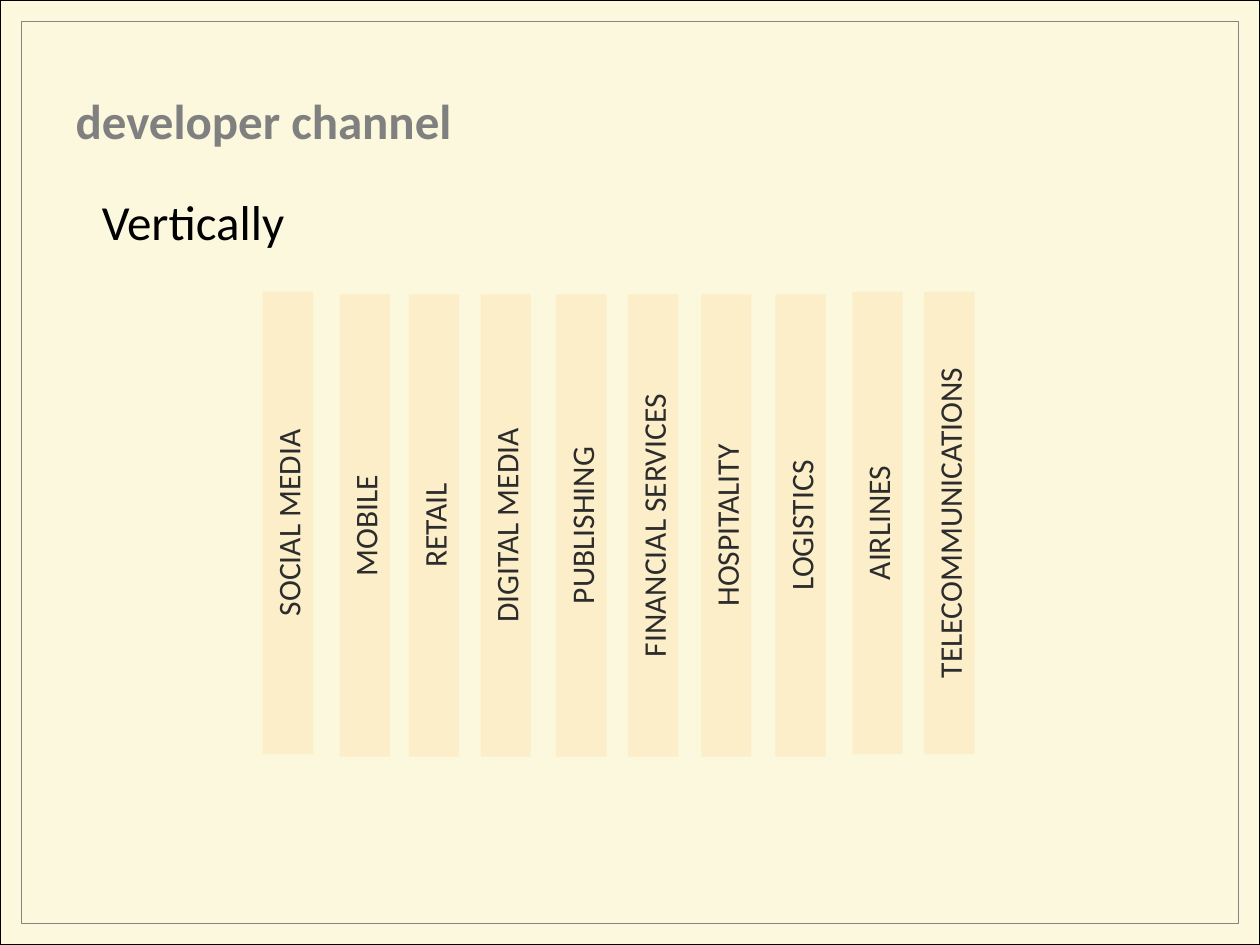
from pptx import Presentation
from pptx.dml.color import RGBColor
from pptx.enum.shapes import MSO_SHAPE as Shape
from pptx.enum.text import MSO_ANCHOR as Anchor, MSO_AUTO_SIZE as Fit, PP_ALIGN as Align
from pptx.util import Inches, Pt

WIDE, HIGH = 10, 7.5
TITLE = "developer channel"
HEAD = "Vertically"
LONG, THICK = 3.67, 0.4
UPPER, LOWER = 3.95, 3.97
BARS = [
    ("SOCIAL MEDIA", 0.45, UPPER),
    ("MOBILE", 1.06, LOWER),
    ("RETAIL", 1.61, LOWER),
    ("DIGITAL MEDIA", 2.18, LOWER),
    ("PUBLISHING", 2.78, LOWER),
    ("FINANCIAL SERVICES", 3.35, LOWER),
    ("HOSPITALITY", 3.93, LOWER),
    ("LOGISTICS", 4.52, LOWER),
    ("AIRLINES", 5.13, UPPER),
    ("TELECOMMUNICATIONS", 5.7, UPPER),
]


def color(code):
    return RGBColor.from_string(code)


def write(shape, text, size=28, ink="000000", bold=False, align=Align.LEFT, wrap=True):
    frame = shape.text_frame
    frame.auto_size = Fit.NONE
    frame.word_wrap = wrap
    frame.vertical_anchor = Anchor.MIDDLE
    par = frame.paragraphs[0]
    par.alignment = align
    run = par.add_run()
    run.text = text
    font = run.font
    font.name, font.size, font.bold = "Calibri", Pt(size), bold
    font.color.rgb = color(ink)


def rect(slide, box, fill=None, line=None, width=0.75):
    shape = slide.shapes.add_shape(Shape.RECTANGLE, *map(Inches, box))
    shape.shadow.inherit = False
    if fill:
        shape.fill.solid()
        shape.fill.fore_color.rgb = color(fill)
    else:
        shape.fill.background()
    if line:
        shape.line.color.rgb = color(line)
        shape.line.width = Pt(width)
    else:
        shape.line.fill.background()
    return shape


def main():
    """Build the slide of vertical industry bars."""
    deck = Presentation()
    deck.slide_width, deck.slide_height = Inches(WIDE), Inches(HIGH)
    slide = deck.slides.add_slide(deck.slide_layouts[5])

    edge = 0.17
    rect(slide, (0, 0, WIDE, HIGH), "FCF8DE", "000000")
    rect(slide, (edge, edge, WIDE - 2 * edge, HIGH - 2 * edge), line="848484", width=0.5)

    for name, left, top in BARS:
        bar = rect(slide, (left, top, LONG, THICK), "FBEEC9")
        bar.rotation = 270
        write(bar, name, size=18, ink="2C2C2C", align=Align.CENTER, wrap=False)

    head = slide.shapes.add_textbox(*map(Inches, (0.71, 1.42, 3.79, 0.67)))
    write(head, HEAD)

    title = slide.shapes.title
    title.left, title.top, title.width, title.height = map(Inches, (0.5, 0.67, 9, 0.57))
    write(title, TITLE, ink="808080", bold=True)
    slide.shapes._spTree.append(title._element)

    deck.save("out.pptx")


if __name__ == "__main__":
    main()
